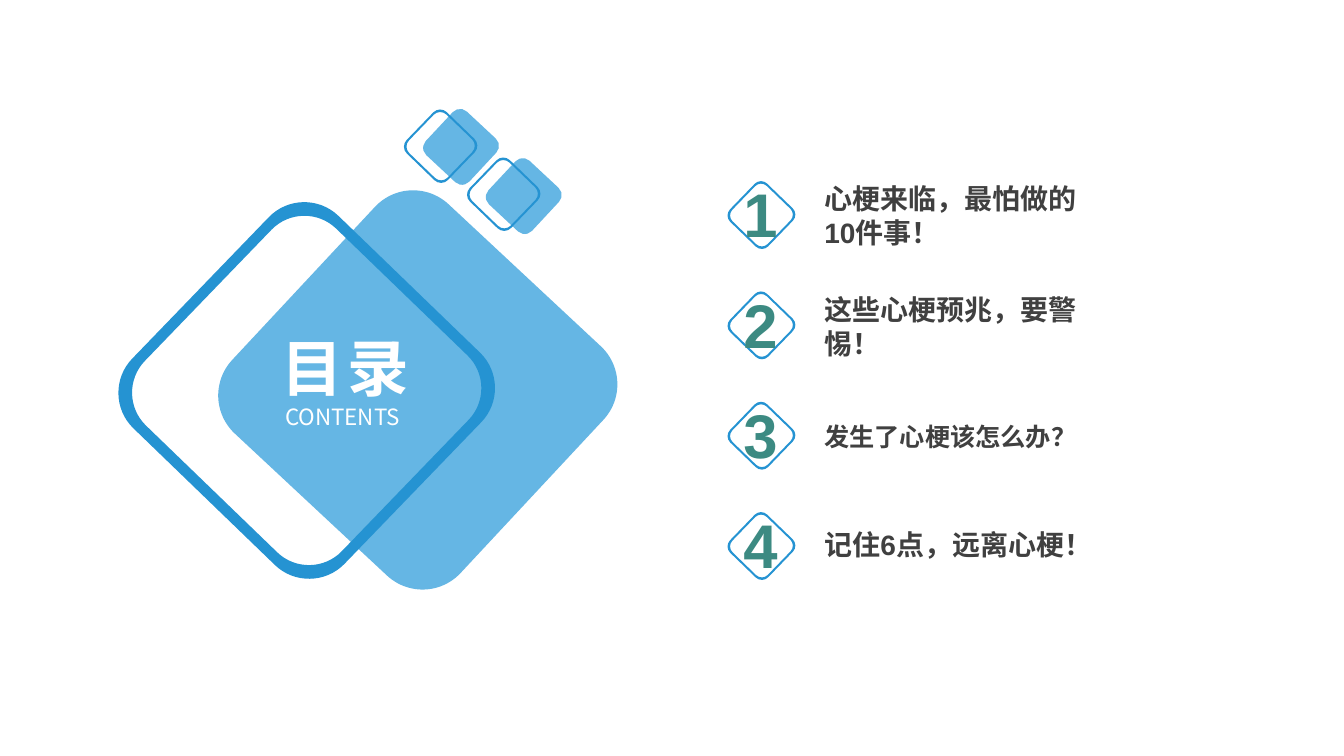
from dataclasses import dataclass
from math import cos, radians, sin

from lxml.etree import SubElement
from pptx import Presentation
from pptx.dml.color import RGBColor
from pptx.enum.shapes import MSO_SHAPE as Kind
from pptx.enum.text import MSO_ANCHOR as Anchor, MSO_AUTO_SIZE as Fit, PP_ALIGN as Align
from pptx.oxml.ns import qn
from pptx.util import Cm, Pt

BLUE, LIGHT, WHITE = "2593D2", "65B6E4", "FFFFFF"
GREEN, GREY = "3C8A82", "404040"
SANS, CJK = "Arial", "Noto Sans CJK SC"
PITCH = 2.78
BEND = 0.55  # handle length of a quarter circle, as a part of its radius


@dataclass
class Box:
    x: float
    y: float
    w: float
    h: float

    def place(self) -> tuple:
        return Cm(self.x), Cm(self.y), Cm(self.w), Cm(self.h)


@dataclass
class Pair:
    tile: Box
    x: float
    y: float
    side: float
    edge: float


@dataclass
class Item:
    text: str
    y: float
    size: int = 20
    width: float = 7.52


PAIRS = [
    Pair(Box(6.58, 5.89, 7.9, 7.87), 4.01, 6.12, 7.44, 0.27),
    Pair(Box(12.45, 4.19, 1.5, 1.5), 11.97, 4.17, 1.45, 0.05),
    Pair(Box(10.87, 2.95, 1.5, 1.5), 10.38, 2.96, 1.45, 0.05),
]
ITEMS = [
    Item("心梗来临，最怕做的10件事！", 4.64),
    Item("这些心梗预兆，要警惕！", 7.43),
    Item("发生了心梗该怎么办？", 10.21, 18, 10.44),
    Item("记住6点，远离心梗！", 12.93),
]


def paint(fmt, color: str) -> None:
    """Give a fill or a font a solid colour."""
    fmt.solid()
    fmt.fore_color.rgb = RGBColor.from_string(color)


def curve(x: float, y: float, side: float) -> list:
    """Start, two handles and end of each corner of a rounded square."""
    r = side / 6
    points = []
    for turn in range(4):
        mid_x = x + (side - r if turn in (0, 3) else r)
        mid_y = y + (side - r if turn in (0, 1) else r)
        c, s = cos(radians(turn * 90)), sin(radians(turn * 90))
        for u, v in ((1, 0), (1, BEND), (BEND, 1), (0, 1)):
            points.append((Cm(mid_x + r * (u * c - v * s)),
                           Cm(mid_y + r * (u * s + v * c))))
    return points


def bend(shape) -> None:
    """Turn the three lines at each corner into one Bezier curve."""
    for move in list(shape.element.iter(qn("a:moveTo"))):
        lines = []
        for node in move.itersiblings():
            if node.tag != qn("a:lnTo"):
                break
            lines.append(node)
        for first in range(0, 15, 4):
            arc = lines[first].makeelement(qn("a:cubicBezTo"))
            lines[first].addprevious(arc)
            for line in lines[first:first + 3]:
                arc.append(line[0])
                line.getparent().remove(line)


def finish(shape, color: str, angle: int) -> None:
    paint(shape.fill, color)
    shape.line.fill.background()
    shape.shadow.inherit = False
    shape.rotation = angle


def ring(shapes, x: float, y: float, side: float, edge: float) -> None:
    """Draw a tilted frame: an outer outline and a reversed inner one."""
    outer = curve(x, y, side)
    inner = curve(x + edge, y + edge, side - 2 * edge)[::-1]
    draft = shapes.build_freeform(*outer[0])
    draft.add_line_segments(outer[1:], close=True)
    draft.move_to(*inner[0])
    draft.add_line_segments(inner[1:], close=True)
    frame = draft.convert_to_shape()
    bend(frame)
    finish(frame, BLUE, 44)


def write(shape, box: Box, text: str, *, size: int, color: str, font: str = SANS,
          bold: bool = True, align=Align.LEFT, anchor=Anchor.MIDDLE,
          wrap: bool = True, gap: int = 0) -> None:
    """Place a text shape in front and fill it with one formatted line."""
    shape.left, shape.top, shape.width, shape.height = box.place()
    shape.element.getparent().append(shape.element)
    frame = shape.text_frame
    frame.auto_size = Fit.NONE
    frame.word_wrap = wrap
    frame.vertical_anchor = anchor
    para = frame.paragraphs[0]
    para.alignment = align
    para.space_before = Pt(0)
    props = para._p.get_or_add_pPr()
    props.set("marL", "0")
    props.set("indent", "0")
    SubElement(props, qn("a:buNone"))
    run = para.add_run()
    run.text = text
    run.font.size = Pt(size)
    run.font.bold = bold
    run.font.name = font
    paint(run.font.fill, color)
    look = run._r.get_or_add_rPr()
    SubElement(look, qn("a:ea")).set("typeface", font)
    if gap:
        look.set("spc", str(gap * 100))


def main() -> None:
    deck = Presentation()
    deck.slide_width, deck.slide_height = Cm(33.87), Cm(19.05)
    # The comparison layout holds a title and four body placeholders
    slide = deck.slides.add_slide(deck.slide_layouts[4])
    shapes = slide.shapes
    title, *bodies = slide.placeholders

    # Tilted tiles with frames
    for pair in PAIRS:
        tile = shapes.add_shape(Kind.ROUNDED_RECTANGLE, *pair.tile.place())
        finish(tile, LIGHT, 313)
        ring(shapes, pair.x, pair.y, pair.side, pair.edge)

    # Heading
    write(title, Box(5.66, 8.18, 6.07, 2.26), "目录", size=44, color=WHITE,
          font=CJK, align=Align.CENTER, anchor=Anchor.TOP, gap=3)
    box = Box(5.6, 10.03, 6.07, 0.89)
    write(shapes.add_textbox(*box.place()), box, "CONTENTS", size=16, color=WHITE,
          font=CJK, bold=False, align=Align.CENTER, anchor=Anchor.TOP)

    # Numbered entries
    for i, (item, body) in enumerate(zip(ITEMS, bodies)):
        drop = i * PITCH
        ring(shapes, 18.52, 4.75 + drop, 1.34, 0.05)
        write(body, Box(20.52, item.y, item.width, 1.57), item.text,
              size=item.size, color=GREY)
        box = Box(18.43, 4.31 + drop, 1.47, 2.13)
        write(shapes.add_textbox(*box.place()), box, str(i + 1), size=44,
              color=GREEN, align=Align.CENTER, wrap=False)

    deck.save("out.pptx")


if __name__ == "__main__":
    main()
